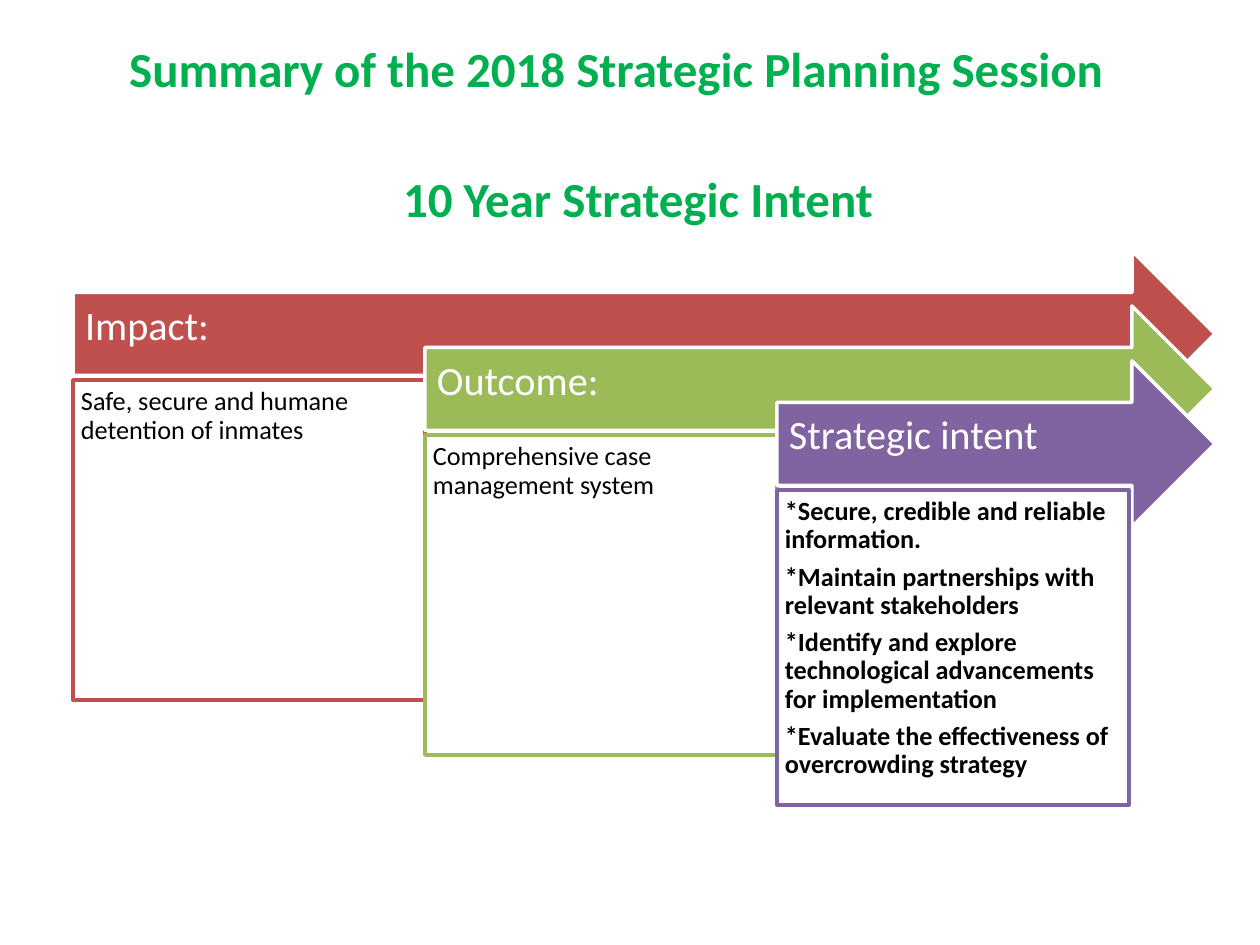
from pptx import Presentation
from pptx.dml.color import RGBColor
from pptx.enum.shapes import MSO_SHAPE
from pptx.enum.text import MSO_ANCHOR, PP_ALIGN
from pptx.util import Emu, Pt

PX_PER_INCH = 126
WHITE, BLACK, GREEN = "FFFFFF", "000000", "00B050"


def px(length):
    return Emu(round(length * 914400 / PX_PER_INCH))


def color(hex_string):
    return RGBColor.from_string(hex_string)


class IntentSlide:
    font = "Calibri"
    heading_size, label_size, body_size = 28, 23, 15
    line_width = 2

    def __init__(self, slide):
        self.slide = slide

    def fill_text(self, frame, paragraphs, size, ink, bold, insets, anchor,
                  align=PP_ALIGN.LEFT, line_spacing=0.9, space_after=0):
        """Fill a text frame; insets are left, top, right, bottom."""
        frame.word_wrap = True
        frame.vertical_anchor = anchor
        (frame.margin_left, frame.margin_top,
         frame.margin_right, frame.margin_bottom) = map(px, insets)
        for index, wording in enumerate(paragraphs):
            paragraph = frame.add_paragraph() if index else frame.paragraphs[0]
            paragraph.alignment = align
            paragraph.line_spacing = line_spacing
            paragraph.space_after = Pt(space_after)
            run = paragraph.add_run()
            run.text = wording
            run.font.name = self.font
            run.font.size = Pt(size)
            run.font.bold = bold
            run.font.color.rgb = color(ink)

    def heading(self, left, top, width, height, wording):
        box = self.slide.shapes.add_textbox(*map(px, (left, top, width, height)))
        self.fill_text(box.text_frame, [wording], self.heading_size, GREEN, True,
                       (13, 6, 13, 6), MSO_ANCHOR.MIDDLE, PP_ALIGN.CENTER, 1.0)

    def outlined(self, preset, left, top, width, height, fill, line):
        shape = self.slide.shapes.add_shape(
            preset, *map(px, (left, top, width, height)))
        shape.shadow.inherit = False
        shape.fill.solid()
        shape.fill.fore_color.rgb = color(fill)
        shape.line.color.rgb = color(line)
        shape.line.width = Pt(self.line_width)
        return shape

    def arrow(self, left, top, width, height, accent, label):
        arrow = self.outlined(MSO_SHAPE.RIGHT_ARROW, left, top, width, height,
                              accent, WHITE)
        self.fill_text(arrow.text_frame, [label], self.label_size, WHITE, False,
                       (12, 12, 35, 26), MSO_ANCHOR.MIDDLE)

    def panel(self, left, top, width, height, accent, paragraphs, bold):
        panel = self.outlined(MSO_SHAPE.RECTANGLE, left, top, width, height,
                              WHITE, accent)
        self.fill_text(panel.text_frame, paragraphs, self.body_size, BLACK, bold,
                       (8, 8, 8, 8), MSO_ANCHOR.TOP, space_after=5)


STAGES = [
    ("Impact:", "C0504D", 320, False,
     ["Safe, secure and humane detention of inmates"]),
    ("Outcome:", "9BBB59", 320, False,
     ["Comprehensive case management system"]),
    ("Strategic intent", "8064A2", 315, True,
     ["*Secure, credible and reliable information.",
      "*Maintain partnerships with relevant stakeholders",
      "*Identify and explore technological advancements for implementation",
      "*Evaluate the effectiveness of overcrowding strategy"]),
]
STAGE_LEFT, STAGE_TOP, ARROW_TIP = 73, 251, 1215
PANEL_WIDTH, STEP_DOWN = 352, 55
ARROW_HEIGHT, PANEL_DROP = 166, 129


def main():
    deck = Presentation()
    deck.slide_width, deck.slide_height = px(1260), px(945)
    page = IntentSlide(deck.slides.add_slide(deck.slide_layouts[6]))

    page.heading(49, 15, 1134, 106,
                 "Summary of the 2018 Strategic Planning Session")
    for index, (label, accent, panel_height, bold, points) in enumerate(STAGES):
        left = STAGE_LEFT + index * PANEL_WIDTH
        top = STAGE_TOP + index * STEP_DOWN
        page.arrow(left, top, ARROW_TIP - left, ARROW_HEIGHT, accent, label)
        page.panel(left, top + PANEL_DROP, PANEL_WIDTH, panel_height, accent,
                   points, bold)
    page.heading(71, 145, 1134, 106, "10 Year Strategic Intent")

    deck.save("out.pptx")


if __name__ == "__main__":
    main()
